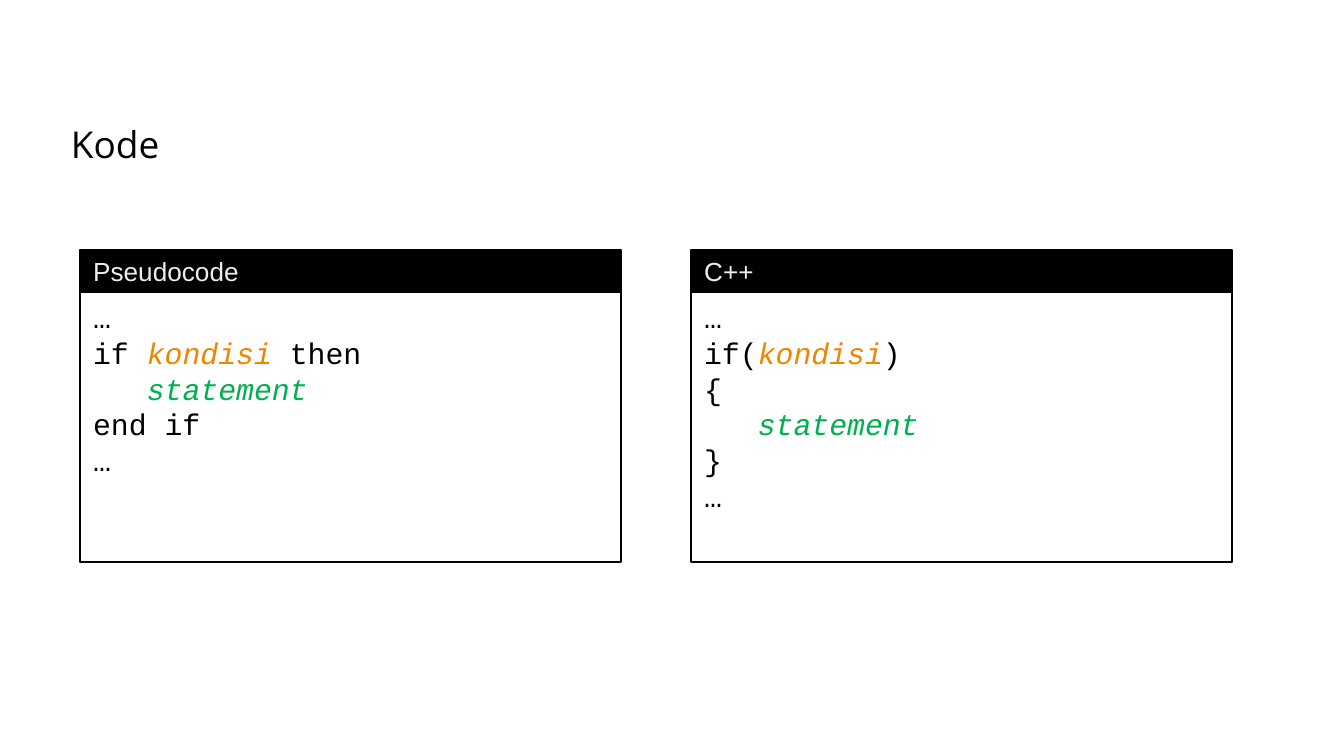
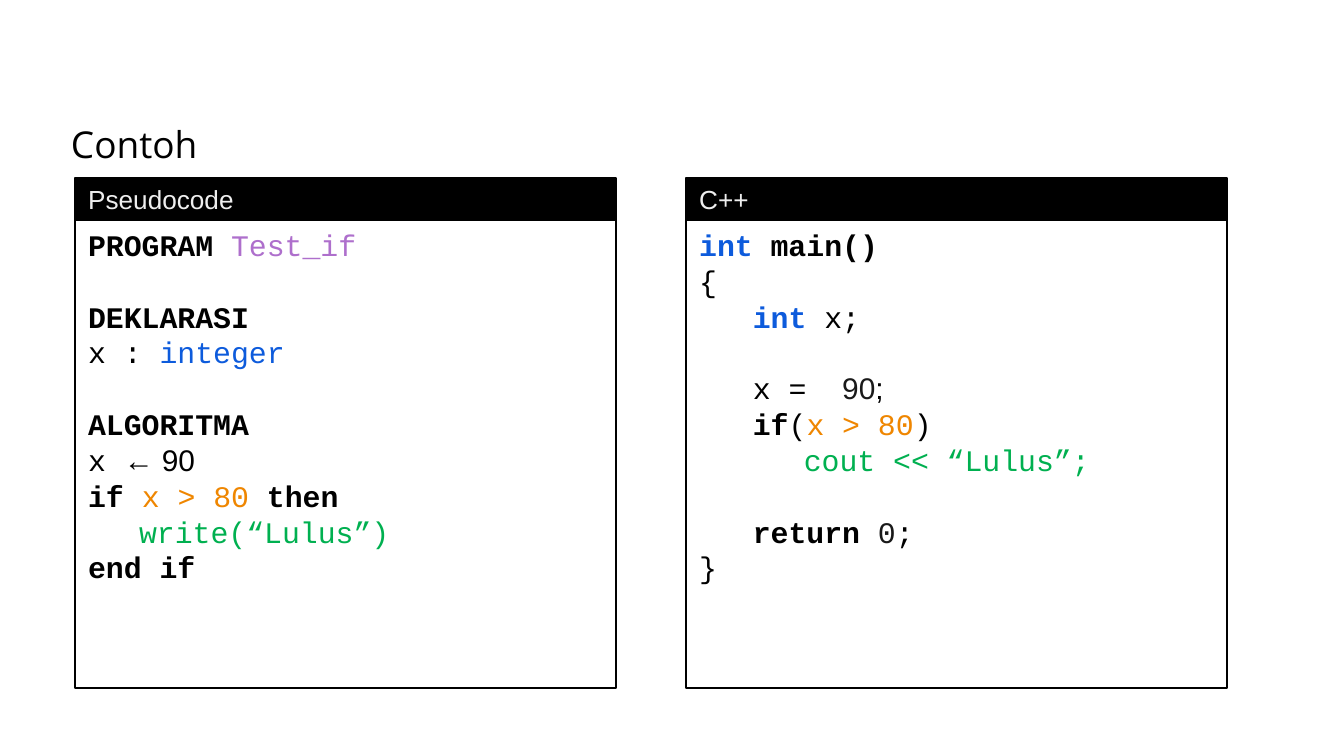
import pptx
import pptx.util
import pptx.dml.color
import pptx.enum.shapes
import pptx.enum.text

RGB = pptx.dml.color.RGBColor
BLACK = RGB(0, 0, 0)
PALE = RGB(0xEE, 0xEE, 0xEE)
ORANGE = RGB(0xEF, 0x86, 0x00)
GREEN = RGB(0x00, 0xB0, 0x50)
BLUE = RGB(0x0D, 0x5B, 0xDC)
PURPLE = RGB(0xAE, 0x6F, 0xCC)
DARK = RGB(0x19, 0x19, 0x19)

PX = 914400 / 134.4
MONO, SANS, HEAD = "Courier New", "Arial", "Open Sans"
PITCH, WIDE, BAR = 611, 541, 42
HANG = 51
LINE = 19.2

STYLES = {
    "bold": {"bold": True},
    "key": {"bold": True, "color": BLUE},
    "type": {"color": BLUE},
    "name": {"color": PURPLE},
    "cond": {"color": ORANGE},
    "act": {"color": GREEN},
    "cond_i": {"color": ORANGE, "italic": True},
    "act_i": {"color": GREEN, "italic": True},
    "num": {"color": DARK},
    "sans": {"name": SANS},
    "sans_num": {"name": SANS, "color": DARK},
    "semi": {"name": SANS},
}

GAP = None

SLIDES = [
    {
        "title": "Kode", "left": 80, "top": 250, "tall": 270,
        "panels": [
            ("Pseudocode", [
                ["…"],
                ["if ", ("kondisi ", "cond_i"), "then"],
                ["   ", ("statement", "act_i")],
                ["end if"],
                ["…"],
            ]),
            ("C++", [
                ["…"],
                ["if(", ("kondisi", "cond_i"), ")"],
                ["{"],
                ["   ", ("statement", "act_i")],
                ["}"],
                ["…"],
            ]),
        ],
    },
    {
        "title": "Contoh", "left": 75, "top": 178, "tall": 468,
        "panels": [
            ("Pseudocode", [
                [("PROGRAM ", "bold"), ("Test_if", "name")],
                GAP,
                [("DEKLARASI", "bold")],
                ["x : ", ("integer", "type")],
                GAP,
                [("ALGORITMA", "bold")],
                ["x ", ("← 90", "sans")],
                [("if ", "bold"), ("x > 80 ", "cond"), ("then", "bold")],
                ["\t", ("write(“Lulus”)", "act")],
                [("end if", "bold")],
            ]),
            ("C++", [
                [("int ", "key"), ("main()", "bold")],
                ["{"],
                ["   ", ("int ", "key"), "x;"],
                GAP,
                ["   x =  ", ("90", "sans_num"), (";", "semi")],
                ["   ", ("if", "bold"), "(", ("x > 80", "cond"), ")"],
                ["\t   ", ("cout << “Lulus”;", "act")],
                GAP,
                ["   ", ("return ", "bold"), ("0", "num"), ";"],
                ["}"],
            ]),
        ],
    },
]


def px(*vals):
    return [round(v * PX) for v in vals]


def set_font(font, name=None, size=None, color=None, bold=None, italic=None):
    if name:
        font.name = name
    if size:
        font.size = pptx.util.Pt(size)
    if color is not None:
        font.color.rgb = color
    if bold is not None:
        font.bold = bold
    if italic is not None:
        font.italic = italic


def add_box(slide, *area):
    box = slide.shapes.add_shape(pptx.enum.shapes.MSO_SHAPE.RECTANGLE, *px(*area))
    box.shadow.inherit = False
    box.fill.background()
    box.line.color.rgb = BLACK
    box.line.width = pptx.util.Pt(0.75)
    return box


def add_line(para, text, **look):
    para.alignment = pptx.enum.text.PP_ALIGN.LEFT
    set_font(para.font, **look)
    para.add_run().text = text


def add_code(frame, lines):
    frame.vertical_anchor = pptx.enum.text.MSO_ANCHOR.TOP
    para, gap = frame.paragraphs[0], 0
    for row, line in enumerate(lines):
        if line is GAP:
            gap = LINE
            continue
        if row:
            para = frame.add_paragraph()
        para.alignment = pptx.enum.text.PP_ALIGN.LEFT
        if line[0][0] == "\t":
            props = para._p.get_or_add_pPr()
            hang = px(HANG)[0]
            props.set("marL", str(hang))
            props.set("indent", str(-hang))
        para.space_before = pptx.util.Pt(gap)
        gap = 0
        set_font(para.font, MONO, 16, BLACK)
        for part in line:
            text, style = part if isinstance(part, tuple) else (part, None)
            run = para.add_run()
            run.text = text
            set_font(run.font, **STYLES.get(style, {}))


def add_panel(slide, name, lines, left, top, tall):
    body = add_box(slide, left, top + BAR, WIDE, tall)
    add_code(body.text_frame, lines)
    bar = add_box(slide, left, top, WIDE, BAR)
    bar.fill.solid()
    bar.fill.fore_color.rgb = BLACK
    frame = bar.text_frame
    frame.vertical_anchor = pptx.enum.text.MSO_ANCHOR.MIDDLE
    add_line(frame.paragraphs[0], name, name=SANS, size=14, color=PALE)


def add_title(slide, text):
    frame = slide.shapes.add_textbox(*px(58, 109, 1228, 58)).text_frame
    frame.word_wrap = True
    frame.margin_left = frame.margin_right = px(13)[0]
    frame.margin_top = frame.margin_bottom = px(13)[0]
    add_line(frame.paragraphs[0], text, name=HEAD, size=19.8, color=BLACK)


def main():
    deck = pptx.Presentation()
    deck.slide_width, deck.slide_height = px(1344, 756)
    for page in SLIDES:
        slide = deck.slides.add_slide(deck.slide_layouts[6])
        add_title(slide, page["title"])
        for col, (name, lines) in enumerate(page["panels"]):
            left = page["left"] + col * PITCH
            add_panel(slide, name, lines, left, page["top"], page["tall"])
    deck.save("out.pptx")


if __name__ == "__main__":
    main()
